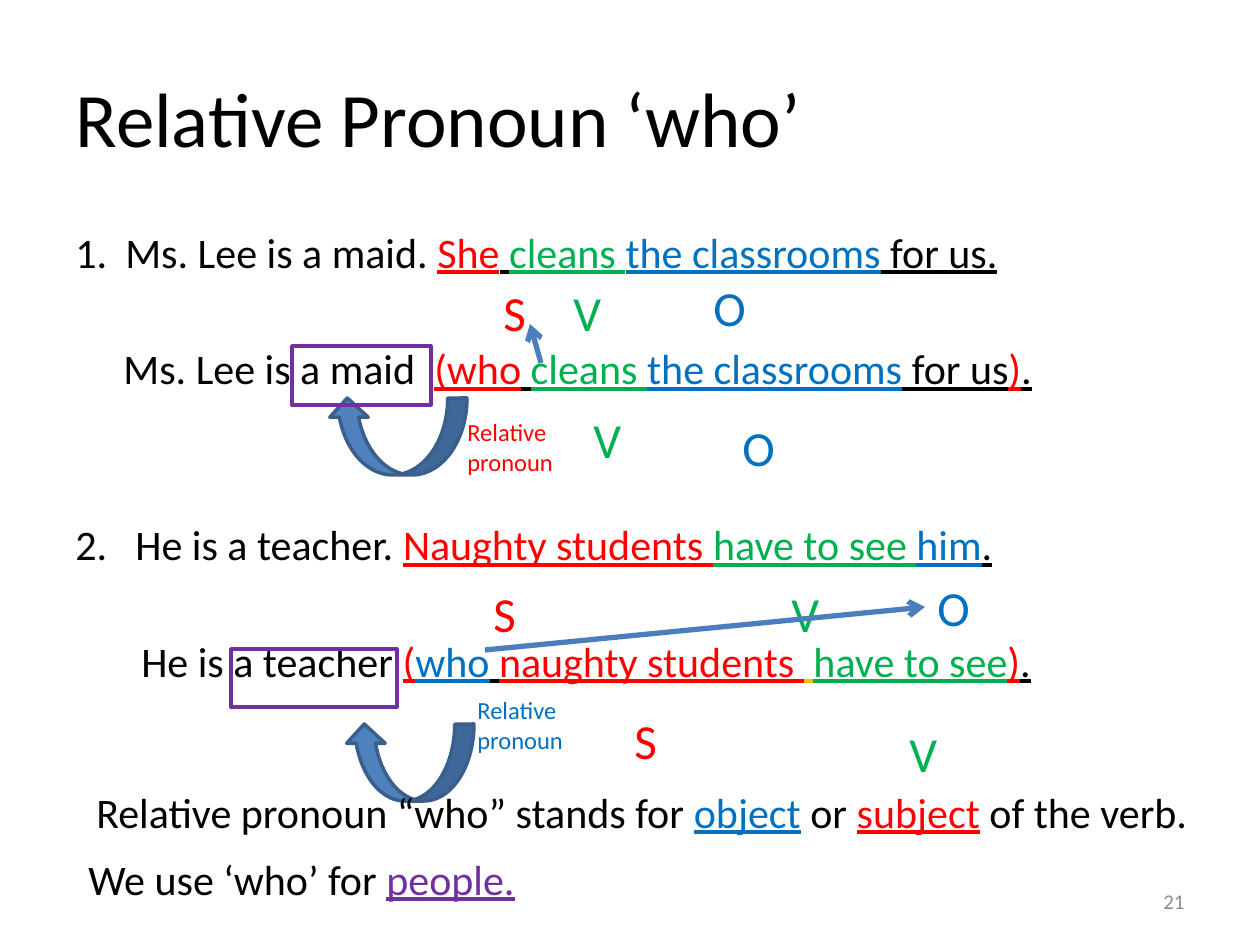
from pptx import Presentation
from pptx.dml.color import RGBColor
from pptx.enum.shapes import MSO_CONNECTOR, MSO_SHAPE
from pptx.enum.text import MSO_ANCHOR, PP_ALIGN
from pptx.oxml.ns import qn
from pptx.util import Emu, Pt
from lxml import etree

STRAIGHT = MSO_CONNECTOR.STRAIGHT
RECTANGLE, CURVED_ARROW = MSO_SHAPE.RECTANGLE, MSO_SHAPE.CURVED_DOWN_ARROW
LEFT, RIGHT = PP_ALIGN.LEFT, PP_ALIGN.RIGHT
MIDDLE = MSO_ANCHOR.MIDDLE

BLACK = RGBColor(0x00, 0x00, 0x00)
RED = RGBColor(0xFF, 0x00, 0x00)
GREEN = RGBColor(0x00, 0xB0, 0x50)
BLUE = RGBColor(0x00, 0x70, 0xC0)
GOLD = RGBColor(0xFF, 0xC0, 0x00)
PURPLE = RGBColor(0x70, 0x30, 0xA0)
GRAY = RGBColor(0x8C, 0x8C, 0x8C)
ARROW_FILL = RGBColor(0x4F, 0x81, 0xBD)
ARROW_EDGE = RGBColor(0x3A, 0x5F, 0x8C)
LINE_BLUE = RGBColor(0x4B, 0x7E, 0xBC)

FONT = "Calibri"
PIXELS_PER_INCH = 126
LINE_HEIGHT, LINE_PITCH = 29.3, 33.6

TITLE = "Relative Pronoun ‘who’"

# left margin, first-line indent, pitches below the previous line, plain lead, underlined parts
EXAMPLES = [
    (50, -50, 1, "1.\tMs. Lee is a maid. ",
     [("She", RED), (" ", BLACK), ("cleans ", GREEN), ("the classrooms", BLUE), (" for us.", BLACK)]),
    (48, 0, 2, "Ms. Lee is a maid  ",
     [("(who", RED), (" ", BLACK), ("cleans ", GREEN), ("the classrooms", BLUE),
      (" for us", BLACK), (")", RED), (".", BLACK)]),
    (60, -60, 3, "2.\tHe is a teacher. ",
     [("Naughty students ", RED), ("have to see ", GREEN), ("him", BLUE), (".", BLACK)]),
    (66, 0, 2, "He is a teacher ",
     [("(", RED), ("who", BLUE), (" ", BLACK), ("naughty students ", RED), (" ", GOLD),
      ("have to see", GREEN), (")", RED), (".", BLACK)]),
]
ROLE_COLORS = {"S": RED, "V": GREEN, "O": BLUE}
ROLES = [
    ("S", 491, 276), ("V", 561, 276), ("O", 701, 271),
    ("V", 581, 403), ("O", 730, 411),
    ("S", 481, 577), ("V", 779, 577), ("O", 925, 571),
    ("S", 622, 704), ("V", 897, 717),
]
PRONOUN_NOTES = [((455, 411, 179, 72), RED), ((465, 689, 139, 72), BLUE)]
CURVED_ARROWS = [(328, 398, 139, 77), (345, 724, 129, 77)]
POINTERS = [(485, 650, 925, 607), (541, 363, 530, 324)]
ANTECEDENT_FRAMES = [(292, 346, 139, 59), (231, 649, 166, 58)]
RULES = [
    ((84, 780, 1144, 63),
     [("Relative pronoun “who” stands for ", BLACK, False), ("object", BLUE, True),
      (" or ", BLACK, False), ("subject", RED, True), (" of the verb.", BLACK, False)]),
    ((76, 847, 455, 63), [("We use ‘who’ for ", BLACK, False), ("people.", PURPLE, True)]),
]


def px(value):
    return Emu(round(value * 914400 / PIXELS_PER_INCH))


def add_run(paragraph, text, size, color, underlined=False):
    run = paragraph.add_run()
    run.text = text
    run.font.name = FONT
    run.font.size = Pt(size)
    run.font.color.rgb = color
    if underlined:
        run.font.underline = True


def add_text(slide, box, runs, size, wrap=True):
    frame = slide.shapes.add_textbox(*map(px, box)).text_frame
    frame.word_wrap = wrap
    for run in runs:
        add_run(frame.paragraphs[0], run[0], size, *run[1:])
    return frame


def add_examples(slide):
    frame = add_text(slide, (63, 220, 1134, 624), [], 24)
    for index, (margin, indent, pitches, lead, parts) in enumerate(EXAMPLES):
        paragraph = frame.paragraphs[0] if index == 0 else frame.add_paragraph()
        paragraph.space_before = Pt(round(pitches * LINE_PITCH - LINE_HEIGHT, 1))
        properties = paragraph._p.get_or_add_pPr()
        properties.set("marL", str(px(margin)))
        properties.set("indent", str(px(indent)))
        add_run(paragraph, lead, 24, BLACK)
        for text, color in parts:
            add_run(paragraph, text, 24, color, True)


def add_outlined(slide, kind, box, edge, fill=None):
    shape = slide.shapes.add_shape(kind, *map(px, box))
    shape.shadow.inherit = False
    shape.line.color.rgb = edge
    shape.line.width = Pt(2)
    if fill is None:
        shape.fill.background()
    else:
        shape.fill.solid()
        shape.fill.fore_color.rgb = fill
    return shape


def add_pointer(slide, ends):
    connector = slide.shapes.add_connector(STRAIGHT, *map(px, ends))
    connector.line.color.rgb = LINE_BLUE
    connector.line.width = Pt(3)
    etree.SubElement(connector.line._get_or_add_ln(), qn("a:tailEnd"), type="arrow")
    etree.SubElement(connector._element.spPr, qn("a:effectLst"))


def main():
    presentation = Presentation()
    presentation.slide_width, presentation.slide_height = px(1260), px(945)
    slide = presentation.slides.add_slide(presentation.slide_layouts[5])

    title = slide.shapes.title
    title.left, title.top, title.width, title.height = map(px, (63, 38, 1134, 158))
    title.text_frame.vertical_anchor = MIDDLE
    heading = title.text_frame.paragraphs[0]
    heading.alignment = LEFT
    add_run(heading, TITLE, 44, BLACK)

    add_examples(slide)
    for role, left, top in ROLES:
        add_text(slide, (left, top, 49, 72), [(role, ROLE_COLORS[role])], 28)
    for box, color in PRONOUN_NOTES:
        add_text(slide, box, [("Relative pronoun", color)], 14)
    for box in CURVED_ARROWS:
        add_outlined(slide, CURVED_ARROW, box, ARROW_EDGE, ARROW_FILL).rotation = 180
    for ends in POINTERS:
        add_pointer(slide, ends)
    for box in ANTECEDENT_FRAMES:
        add_outlined(slide, RECTANGLE, box, PURPLE)
    for box, runs in RULES:
        add_text(slide, box, runs, 24, wrap=False)

    number = add_text(slide, (903, 876, 294, 50), [("21", GRAY)], 12)
    number.vertical_anchor = MIDDLE
    number.paragraphs[0].alignment = RIGHT

    presentation.save("out.pptx")


if __name__ == "__main__":
    main()
